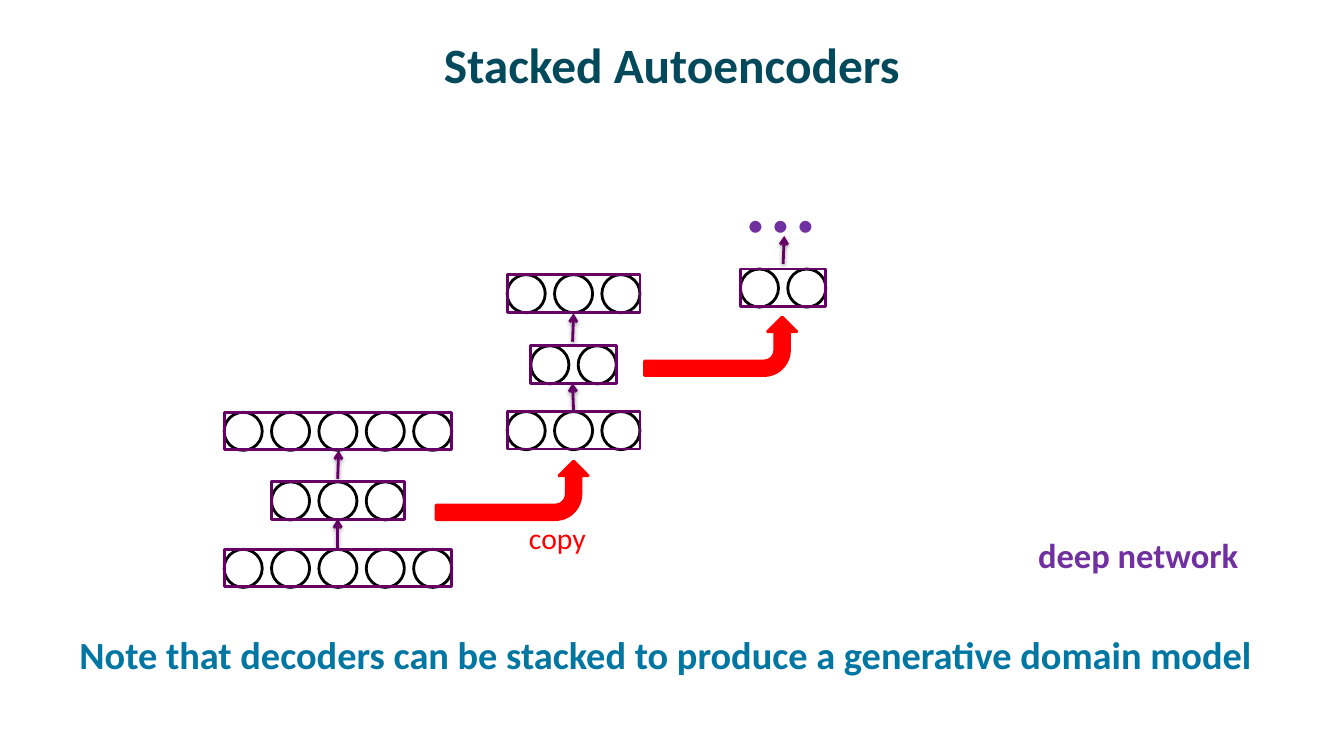
"""Build a slide showing how autoencoders are stacked into a deep network."""
from dataclasses import dataclass

from lxml import etree
from pptx import Presentation
from pptx.dml.color import RGBColor
from pptx.enum.shapes import MSO_CONNECTOR, MSO_SHAPE
from pptx.enum.text import MSO_ANCHOR, MSO_AUTO_SIZE, PP_ALIGN
from pptx.oxml import parse_xml
from pptx.oxml.ns import nsdecls, qn
from pptx.util import Pt

OVAL, RECTANGLE, BENT_ARROW = MSO_SHAPE.OVAL, MSO_SHAPE.RECTANGLE, MSO_SHAPE.BENT_ARROW
STRAIGHT = MSO_CONNECTOR.STRAIGHT
CENTER, TOP, MIDDLE = PP_ALIGN.CENTER, MSO_ANCHOR.TOP, MSO_ANCHOR.MIDDLE
NO_AUTOFIT, GROW = MSO_AUTO_SIZE.NONE, MSO_AUTO_SIZE.SHAPE_TO_FIT_TEXT


@dataclass(frozen=True)
class Theme:
    """Colours, type sizes and line width of the slide."""
    font: str = "Calibri"
    title: str = "03495C"
    note: str = "0076A3"
    network: str = "7030A0"
    layer: str = "660066"
    copy: str = "FF0000"
    unit_line: str = "000000"
    unit_fill: str = "FFFFFF"
    title_size: float = 35.3
    note_size: float = 27.4
    network_size: float = 24.7
    copy_size: float = 21.2
    dots_size: float = 70.6
    line_width: float = 2


THEME = Theme()
TITLE = ("Stacked Autoencoders", (48, 12.5, 864, 66))
NOTE = ("Note that decoders can be stacked to produce a generative domain model",
        (31.5, 447, 880, 77))
LABELS = [
    ("copy", (370.8, 367.9, 55.4, 33.1), THEME.copy_size, THEME.copy, False),
    ("...", (524.2, 92.2, 68.4, 92.9), THEME.dots_size, THEME.network, False),
    ("deep network", (734.4, 378, 159.1, 37.4), THEME.network_size, THEME.network, True),
]
STACKS = [
    (241.4, [(5, 392.4), (3, 344.2), (5, 294.5)]),
    (409.7, [(3, 294), (2, 247), (3, 196.2)]),
    (559.4, [(2, 192.2)]),
]
LINKS = [
    (241.2, 392.4, 241.2, 370.8),
    (241.2, 342, 241.9, 321.8),
    (409.7, 293.8, 409, 273.6),
    (409, 244.1, 409.7, 223.9),
    (559.4, 188.6, 560.2, 168.5),
]
COPY_ARROWS = [(344.9, 295.9), (493.9, 193)]
COPY_ARROW_SIZE = (41.8, 108.7)
UNIT, PITCH, LAYER_HEIGHT = 27.2, 33.84, 26.8


def color(value):
    return RGBColor.from_string(value)


def add_run(paragraph, text, size, value, bold):
    run = paragraph.add_run()
    run.text = text
    run.font.name = THEME.font
    run.font.size = Pt(size)
    run.font.bold = bold
    run.font.color.rgb = color(value)


def fill_placeholder(placeholder, content, size, value, anchor):
    text, box = content
    placeholder.left, placeholder.top, placeholder.width, placeholder.height = map(Pt, box)
    frame = placeholder.text_frame
    frame.auto_size, frame.word_wrap, frame.vertical_anchor = NO_AUTOFIT, True, anchor
    frame.margin_left = frame.margin_right = Pt(8)
    frame.margin_top = frame.margin_bottom = Pt(4)
    paragraph = frame.paragraphs[0]
    paragraph.alignment = CENTER
    add_run(paragraph, text, size, value, True)
    return paragraph


def add_label(slide, text, box, size, value, bold):
    frame = slide.shapes.add_textbox(*map(Pt, box)).text_frame
    frame.word_wrap, frame.auto_size = False, GROW
    add_run(frame.paragraphs[0], text, size, value, bold)


def add_shape(slide, kind, box, line, fill=None):
    shape = slide.shapes.add_shape(kind, *map(Pt, box))
    shape.shadow.inherit = False
    shape.line.color.rgb = color(line)
    shape.line.width = Pt(THEME.line_width)
    if fill:
        shape.fill.solid()
        shape.fill.fore_color.rgb = color(fill)
    else:
        shape.fill.background()
    return shape


def add_layer(slide, center, count, top):
    width = (count - 1) * PITCH + UNIT
    left = center - width / 2
    for index in range(count):
        add_shape(slide, OVAL, (left + index * PITCH, top, UNIT, UNIT),
                  THEME.unit_line, THEME.unit_fill)
    add_shape(slide, RECTANGLE, (left, top, width, LAYER_HEIGHT), THEME.layer)


def add_link(slide, ends):
    link = slide.shapes.add_connector(STRAIGHT, *map(Pt, ends))
    link.line.color.rgb = color(THEME.layer)
    link.line.width = Pt(THEME.line_width)
    properties = link.element.spPr
    etree.SubElement(properties.find(qn("a:ln")), qn("a:tailEnd"), type="arrow")
    properties.append(parse_xml(
        f'<a:effectLst {nsdecls("a")}><a:outerShdw blurRad="{Pt(3.1)}" dist="{Pt(1.6)}" '
        'dir="5400000" rotWithShape="0"><a:srgbClr val="000000"><a:alpha val="38000"/>'
        '</a:srgbClr></a:outerShdw></a:effectLst>'))


def add_copy_arrow(slide, position):
    arrow = add_shape(slide, BENT_ARROW, position + COPY_ARROW_SIZE, THEME.copy, THEME.copy)
    arrow.rotation = 270
    arrow.element.spPr.find(qn("a:xfrm")).set("flipV", "1")


def main():
    presentation = Presentation()
    presentation.slide_width, presentation.slide_height = Pt(960), Pt(540)
    slide = presentation.slides.add_slide(presentation.slide_layouts[1])
    fill_placeholder(slide.shapes.title, TITLE, THEME.title_size, THEME.title, MIDDLE)
    note = fill_placeholder(slide.placeholders[1], NOTE, THEME.note_size, THEME.note, TOP)
    note.space_before = Pt(19.5)
    note_format = note._p.get_or_add_pPr()
    note_format.set("marL", str(Pt(7.2)))
    note_format.set("indent", "0")
    etree.SubElement(note_format, qn("a:buNone"))

    for ends in LINKS:
        add_link(slide, ends)
    for center, layers in STACKS:
        for count, top in layers:
            add_layer(slide, center, count, top)
    for position in COPY_ARROWS:
        add_copy_arrow(slide, position)
    for label in LABELS:
        add_label(slide, *label)
    presentation.save("out.pptx")


if __name__ == "__main__":
    main()
